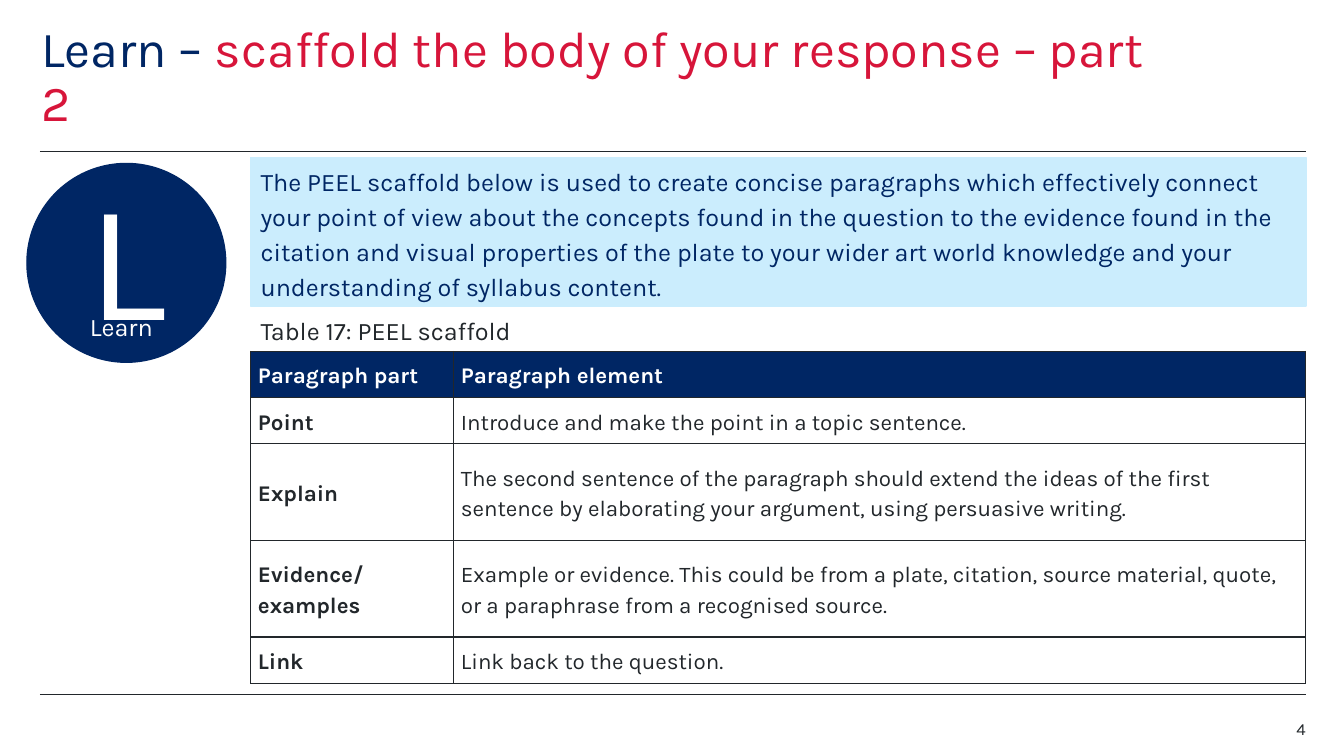
from dataclasses import dataclass

from lxml import etree
from pptx import Presentation
from pptx.dml.color import RGBColor as RGB
from pptx.enum.shapes import MSO_CONNECTOR, MSO_SHAPE as SHAPE
from pptx.enum.text import MSO_ANCHOR as ANCHOR, MSO_AUTO_SIZE as AUTO, PP_ALIGN as ALIGN
from pptx.oxml.ns import qn
from pptx.util import Pt


@dataclass(frozen=True)
class Theme:
    font: str = "Karla"
    navy: RGB = RGB(0x00, 0x26, 0x64)
    red: RGB = RGB(0xD7, 0x15, 0x3A)
    sky: RGB = RGB(0xCB, 0xED, 0xFD)
    ink: RGB = RGB(0x22, 0x27, 0x2B)
    white: RGB = RGB(0xFF, 0xFF, 0xFF)
    title: int = 36
    letter: int = 120
    body: int = 18
    cell: int = 16
    number: int = 12


T = Theme()
LEFT, RIGHT, CONTENT = 28.5, 932.75, 179

prs = Presentation()
prs.slide_width, prs.slide_height = Pt(960), Pt(540)
s = prs.slides.add_slide(prs.slide_layouts[5])


def write(tf, text, size, color, align=ALIGN.LEFT, anchor=ANCHOR.TOP, inset=None):
    """Fill a text frame with one paragraph; inset applies to all four sides."""
    tf.word_wrap = True
    tf.vertical_anchor = anchor
    if inset is not None:
        tf.margin_left = tf.margin_top = tf.margin_right = tf.margin_bottom = Pt(inset)
    p = tf.paragraphs[0]
    p.text = text
    p.alignment = align
    p.font.name, p.font.size, p.font.color.rgb = T.font, Pt(size), color
    return p


def add_block(kind, x, y, w, h, color):
    sp = s.shapes.add_shape(kind, Pt(x), Pt(y), Pt(w), Pt(h))
    sp.shadow.inherit = False
    sp.fill.solid()
    sp.fill.fore_color.rgb = sp.line.color.rgb = color
    sp.line.width = Pt(1)
    return sp


# Rules above and below the content
for y in (108, 496):
    rule = s.shapes.add_connector(MSO_CONNECTOR.STRAIGHT, Pt(LEFT), Pt(y), Pt(RIGHT), Pt(y))
    rule.line.color.rgb, rule.line.width = T.ink, Pt(0.5)
    etree.SubElement(rule._element.spPr, qn("a:effectLst"))

# Title
title = s.shapes.title
title.left, title.top, title.width, title.height = Pt(29.5), Pt(16.5), Pt(793.5), Pt(79)
p = write(title.text_frame, "", T.title, T.navy, anchor=ANCHOR.MIDDLE, inset=0)
title.text_frame.auto_size = AUTO.NONE
p.line_spacing = 0.9
for text, color in (("Learn – ", T.navy),
                    ("scaffold the body of your response – part 2", T.red)):
    r = p.add_run()
    r.text = text
    r.font.color.rgb = color

# Learn badge
badge = add_block(SHAPE.OVAL, 19.25, 116.75, 142, 142, T.navy)
write(badge.text_frame, "L", T.letter, T.white, ALIGN.CENTER, ANCHOR.MIDDLE)
badge.text_frame.margin_bottom = Pt(17.5)
label = s.shapes.add_textbox(Pt(64.25), Pt(222.5), Pt(52.5), Pt(34.5))
write(label.text_frame, "Learn", T.body, T.white, inset=0)

# Introduction
intro = add_block(SHAPE.RECTANGLE, CONTENT, 112.5, RIGHT - CONTENT, 106, T.sky)
p = write(intro.text_frame,
          "The PEEL scaffold below is used to create concise paragraphs which effectively "
          "connect your point of view about the concepts found in the question to the "
          "evidence found in the citation and visual properties of the plate to your wider "
          "art world knowledge and your understanding of syllabus content.",
          T.body, T.navy, anchor=ANCHOR.MIDDLE)
p.line_spacing = 1.15

# Table caption
caption = s.shapes.add_textbox(Pt(CONTENT), Pt(231), Pt(495), Pt(21))
p = write(caption.text_frame, "Table 17: PEEL scaffold", T.body, T.ink)
p.line_spacing = Pt(12)

# PEEL table
rows = [
    ("Paragraph part", "Paragraph element"),
    ("Point", "Introduce and make the point in a topic sentence."),
    ("Explain", "The second sentence of the paragraph should extend the ideas of the first "
                "sentence by elaborating your argument, using persuasive writing."),
    ("Evidence/examples", "Example or evidence. This could be from a plate, citation, source "
                          "material, quote, or a paraphrase from a recognised source."),
    ("Link", "Link back to the question."),
]
widths = (145, RIGHT - CONTENT - 145)
heights = (33, 33, 69, 69, 33)
table = s.shapes.add_table(len(rows), len(widths), Pt(CONTENT), Pt(251),
                           Pt(sum(widths)), Pt(sum(heights))).table
for column, width in zip(table.columns, widths):
    column.width = Pt(width)
for i, (texts, height) in enumerate(zip(rows, heights)):
    table.rows[i].height = Pt(height)
    for j, text in enumerate(texts):
        cell = table.cell(i, j)
        header = i == 0
        p = write(cell.text_frame, text, T.cell, T.white if header else T.ink)
        p.font.bold = header or j == 0
        p.line_spacing = 1.15
        cell.vertical_anchor = ANCHOR.MIDDLE
        cell.margin_left = cell.margin_right = Pt(5.25)
        cell.margin_top = cell.margin_bottom = 0
        tc_pr = cell._tc.get_or_add_tcPr()
        for side in ("lnL", "lnR", "lnT", "lnB"):
            border = etree.SubElement(tc_pr, qn(f"a:{side}"), w=str(Pt(1)))
            fill = etree.SubElement(border, qn("a:solidFill"))
            etree.SubElement(fill, qn("a:srgbClr"), val=str(T.ink))
        cell.fill.solid()
        cell.fill.fore_color.rgb = T.navy if header else T.white

# Slide number
number = s.shapes.add_textbox(Pt(876), Pt(513.5), Pt(RIGHT - 876), Pt(14.5))
write(number.text_frame, "4", T.number, T.ink, ALIGN.RIGHT, inset=0)

prs.save("out.pptx")
